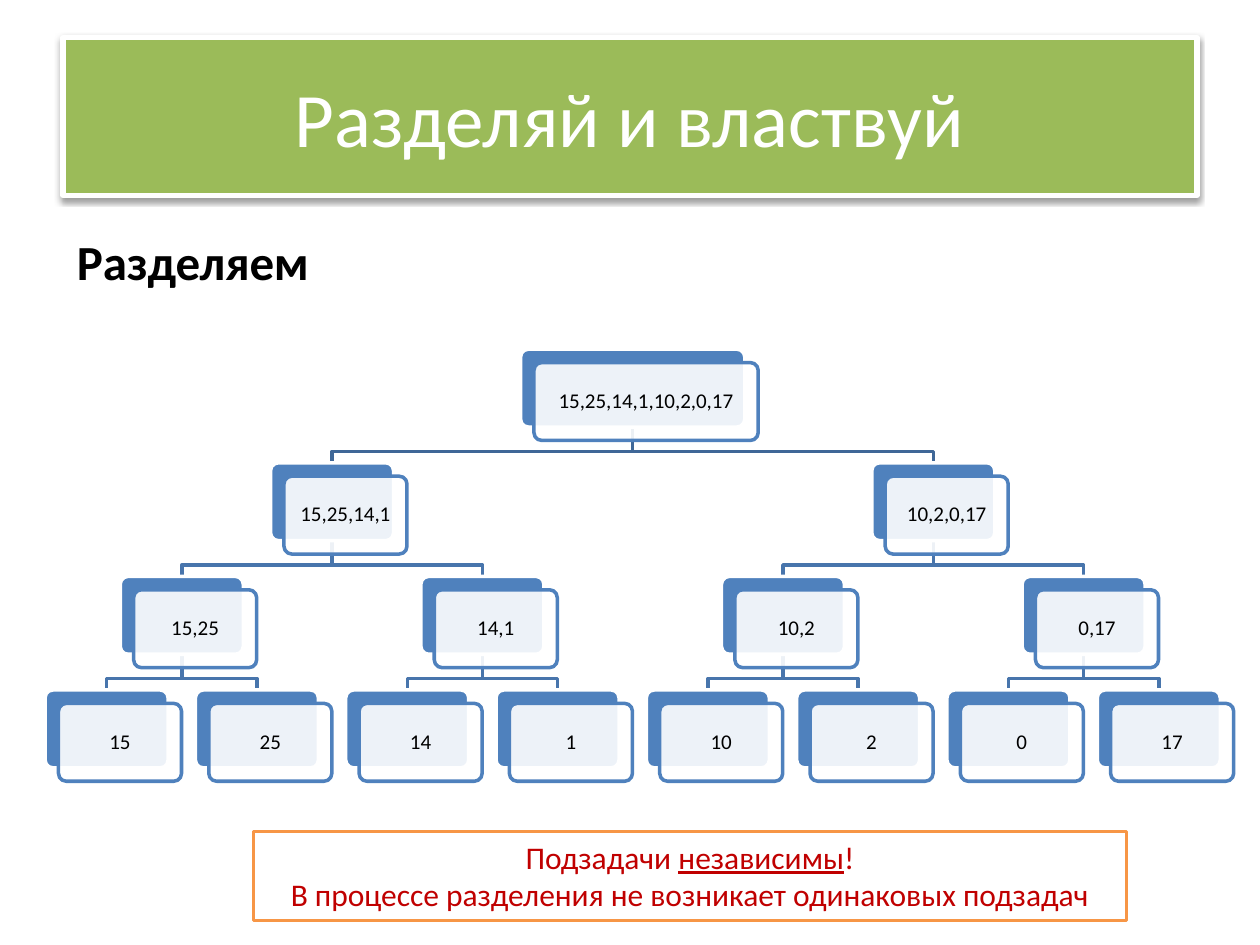
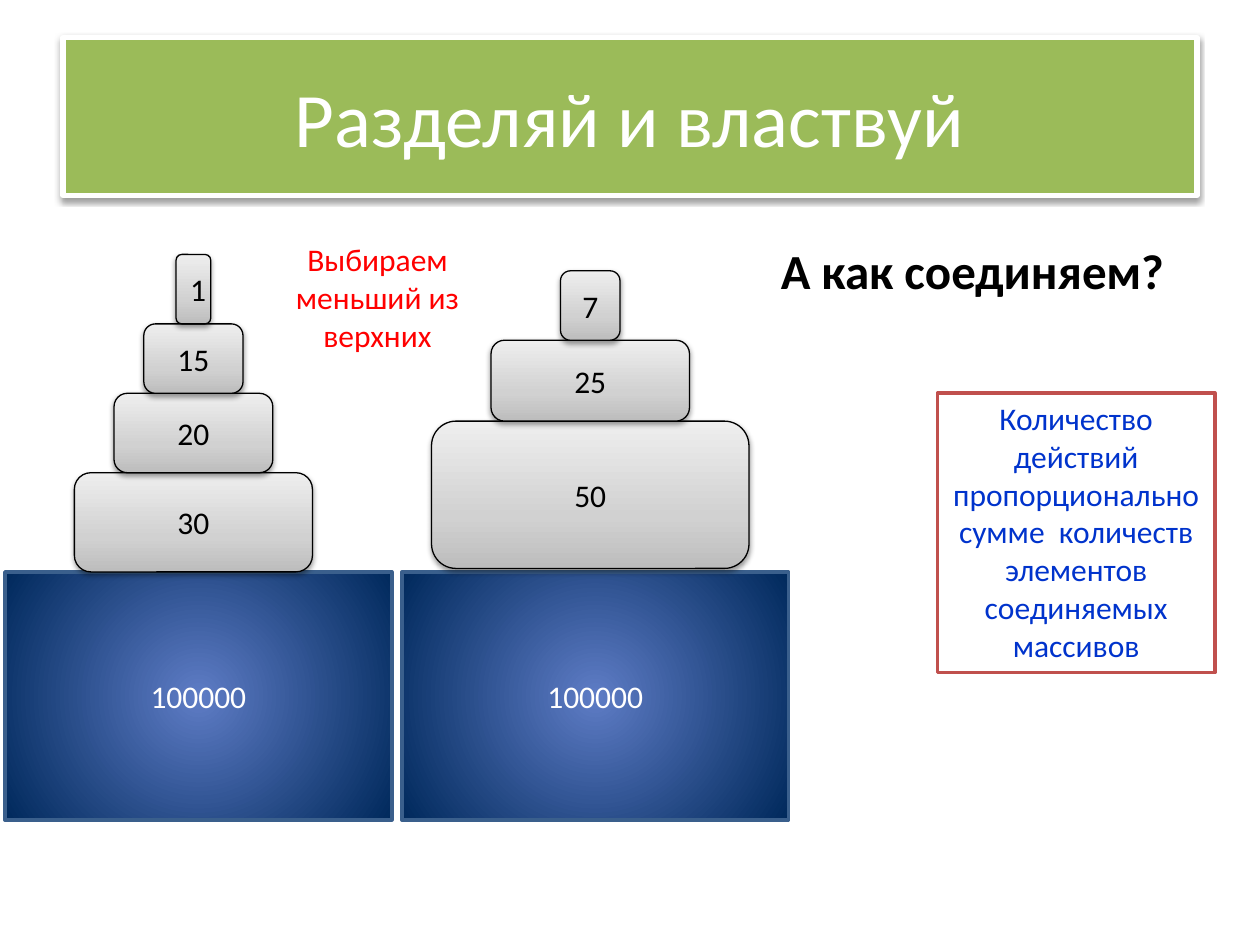
from lxml.etree import SubElement
from pptx import Presentation
from pptx.dml.color import RGBColor
from pptx.enum.shapes import MSO_SHAPE as Shapes
from pptx.enum.text import MSO_ANCHOR as Anchor, MSO_AUTO_SIZE as AutoSize, PP_ALIGN as Align
from pptx.oxml import parse_xml
from pptx.oxml.ns import nsdecls, qn
from pptx.util import Cm, Pt

BLACK, WHITE = "000000", "FFFFFF"
BLUE, GREEN, ORANGE, RED = "4F81BD", "9BBB59", "F79646", "C0504D"
STEEL = [(0, "BDBDBD"), (35, "D1D1D1"), (100, "EEEEEE")]
UPWARD = '<a:lin ang="16200000" scaled="0"/>'
NAVY = [(0, "5E7CC5"), (100, "00295C")]
FROM_CENTRE = ('<a:path path="circle">'
               '<a:fillToRect l="50000" t="50000" r="50000" b="50000"/></a:path>')


def rgb(value):
    return RGBColor.from_string(value)


class Deck:
    font = "Calibri"
    title = "Разделяй и властвуй"

    def __init__(self):
        self.presentation = Presentation()
        self.presentation.slide_width = Cm(25.4)
        self.presentation.slide_height = Cm(19.05)
        self.slide = None

    def add_slide(self):
        self.slide = self.presentation.slides.add_slide(self.presentation.slide_layouts[5])
        banner = self.slide.shapes.title
        banner.left, banner.top = Cm(1.27), Cm(0.76)
        banner.width, banner.height = Cm(22.86), Cm(3.18)
        self.paint(banner, GREEN, WHITE, 3)
        self.cast_shadow(banner)
        self.add_text(banner, self.title, 44, WHITE, anchor=Anchor.MIDDLE)

    def paint(self, shape, fill, line, weight):
        shape.fill.solid()
        shape.fill.fore_color.rgb = rgb(fill)
        shape.line.color.rgb = rgb(line)
        shape.line.width = Pt(weight)
        shape.shadow.inherit = False

    def cast_shadow(self, shape):
        effects = shape.element.spPr.find(qn("a:effectLst"))
        shadow = SubElement(effects, qn("a:outerShdw"), blurRad=str(Pt(3.1)),
                            dist=str(Pt(1.6)), dir="5400000", rotWithShape="0")
        color = SubElement(shadow, qn("a:srgbClr"), val=BLACK)
        SubElement(color, qn("a:alpha"), val="38000")

    def shade(self, shape, stops, direction):
        marks = "".join(f'<a:gs pos="{position * 1000}"><a:srgbClr val="{color}"/></a:gs>'
                        for position, color in stops)
        gradient = parse_xml(f'<a:gradFill {nsdecls("a")} rotWithShape="1">'
                             f'<a:gsLst>{marks}</a:gsLst>{direction}</a:gradFill>')
        properties = shape.element.spPr
        properties.replace(properties.find(qn("a:solidFill")), gradient)

    def add_text(self, shape, text, size, color, bold=False, align=Align.CENTER,
                 anchor=Anchor.TOP, underlined=None):
        frame = shape.text_frame
        frame.word_wrap = True
        frame.vertical_anchor = anchor
        lines = [text] if isinstance(text, str) else text
        for index, line in enumerate(lines):
            paragraph = frame.add_paragraph() if index else frame.paragraphs[0]
            paragraph.alignment = align
            for part in [line] if isinstance(line, str) else line:
                run = paragraph.add_run()
                run.text = part
                run.font.name = self.font
                run.font.size = Pt(size)
                run.font.bold = bold
                run.font.color.rgb = rgb(color)
                if part == underlined:
                    run.font.underline = True

    def box(self, kind, place, fill, line, weight):
        shape = self.slide.shapes.add_shape(kind, *map(Cm, place))
        self.paint(shape, fill, line, weight)
        return shape

    def label(self, place, text, size, color, **style):
        shape = self.slide.shapes.add_textbox(*map(Cm, place))
        self.add_text(shape, text, size, color, **style)
        shape.text_frame.auto_size = AutoSize.SHAPE_TO_FIT_TEXT

    def heading(self, place, text):
        self.label(place, text, 28, BLACK, bold=True, align=Align.LEFT)

    def callout(self, place, text, line, color, **style):
        shape = self.box(Shapes.RECTANGLE, place, WHITE, line, 2)
        self.add_text(shape, text, 18, color, **style)
        shape.text_frame.auto_size = AutoSize.SHAPE_TO_FIT_TEXT

    def branch(self, points, color):
        start, *rest = [(Cm(x), Cm(y)) for x, y in points]
        builder = self.slide.shapes.build_freeform(*start, scale=1.0)
        builder.add_line_segments(rest, close=False)
        shape = builder.convert_to_shape()
        shape.fill.background()
        shape.line.color.rgb = rgb(color)
        shape.line.width = Pt(2)
        shape.shadow.inherit = False

    def card(self, centre, top, width, height, text):
        offset = 0.27
        left = centre - width / 2
        back = self.box(Shapes.ROUNDED_RECTANGLE, (left, top, width, height), BLUE, WHITE, 2)
        front = self.box(Shapes.ROUNDED_RECTANGLE,
                         (left + offset, top + offset, width, height), WHITE, BLUE, 2)
        for shape in (back, front):
            shape.adjustments[0] = 0.1
        color = front.element.spPr.find(qn("a:solidFill"))[0]
        SubElement(color, qn("a:alpha"), val="90000")
        frame = front.text_frame
        frame.margin_left = frame.margin_right = Cm(0.13)
        frame.margin_top = frame.margin_bottom = Cm(0.13)
        self.add_text(front, text, 12, BLACK, anchor=Anchor.MIDDLE)
        frame.paragraphs[0].line_spacing = 0.9

    def split_tree(self, values):
        first_leaf, leaf_step = 2.15, 3.03
        first_top, level_step, height, elbow = 7.04, 2.29, 1.57, 0.49
        levels = []
        size = len(values)
        while size:
            levels.append([(first_leaf + leaf_step * (start + (size - 1) / 2),
                            values[start:start + size])
                           for start in range(0, len(values), size)])
            size //= 2
        tops = [first_top + level_step * depth for depth in range(len(levels))]
        for depth, children in enumerate(levels[1:], 1):
            bottom = tops[depth - 1] + height
            for index, (centre, _) in enumerate(children):
                parent = levels[depth - 1][index // 2][0]
                self.branch([(parent, bottom), (parent, bottom + elbow),
                             (centre, bottom + elbow), (centre, tops[depth])],
                            "3F6797" if depth == 1 else "4875AC")
        for top, nodes in zip(tops, levels):
            width = 4.52 if len(nodes) == 1 else 2.48
            for centre, part in nodes:
                self.card(centre, top, width, height, ",".join(map(str, part)))

    def base(self, left):
        shape = self.box(Shapes.RECTANGLE, (left, 11.53, 7.8, 5), NAVY[0][1], "3A5F8C", 2)
        self.shade(shape, NAVY, FROM_CENTRE)
        self.add_text(shape, "100000", 18, WHITE, anchor=Anchor.MIDDLE)

    def tower(self, centre, bottom, blocks):
        for value, width, height in blocks:
            bottom -= height
            shape = self.box(Shapes.ROUNDED_RECTANGLE,
                             (centre - width / 2, bottom, width, height),
                             STEEL[0][1], BLACK, 0.75)
            self.shade(shape, STEEL, UPWARD)
            self.cast_shadow(shape)
            self.add_text(shape, str(value), 18, BLACK, anchor=Anchor.MIDDLE)


def main():
    deck = Deck()

    deck.add_slide()
    deck.split_tree([15, 25, 14, 1, 10, 2, 0, 17])
    deck.callout((5.11, 16.76, 17.6, 1.8),
                 [["Подзадачи ", "независимы", "!"],
                  "В процессе разделения не возникает одинаковых подзадач"],
                 ORANGE, "C00000", underlined="независимы")
    deck.heading((1.3, 4.55, 8.61, 1.45), "Разделяем")

    deck.add_slide()
    for left in (8.1, 0.1):
        deck.base(left)
    deck.heading((15.49, 4.72, 9.2, 1.45), "А как соединяем?")
    deck.tower(3.9, 11.53, [(30, 4.8, 2), (20, 3.2, 1.6), (15, 2, 1.4), (1, 0.7, 1.4)])
    deck.tower(11.9, 11.46, [(50, 6.4, 2.97), (25, 4, 1.63), (7, 1.2, 1.4)])
    deck.label((5.31, 4.72, 4.6, 2.57), "Выбираем меньший из верхних", 18, "FF0000")
    deck.callout((18.9, 7.92, 5.59, 5.64),
                 "Количество действий пропорционально сумме  количеств "
                 "элементов соединяемых массивов", RED, "0033CC")

    deck.presentation.save("out.pptx")


if __name__ == "__main__":
    main()
